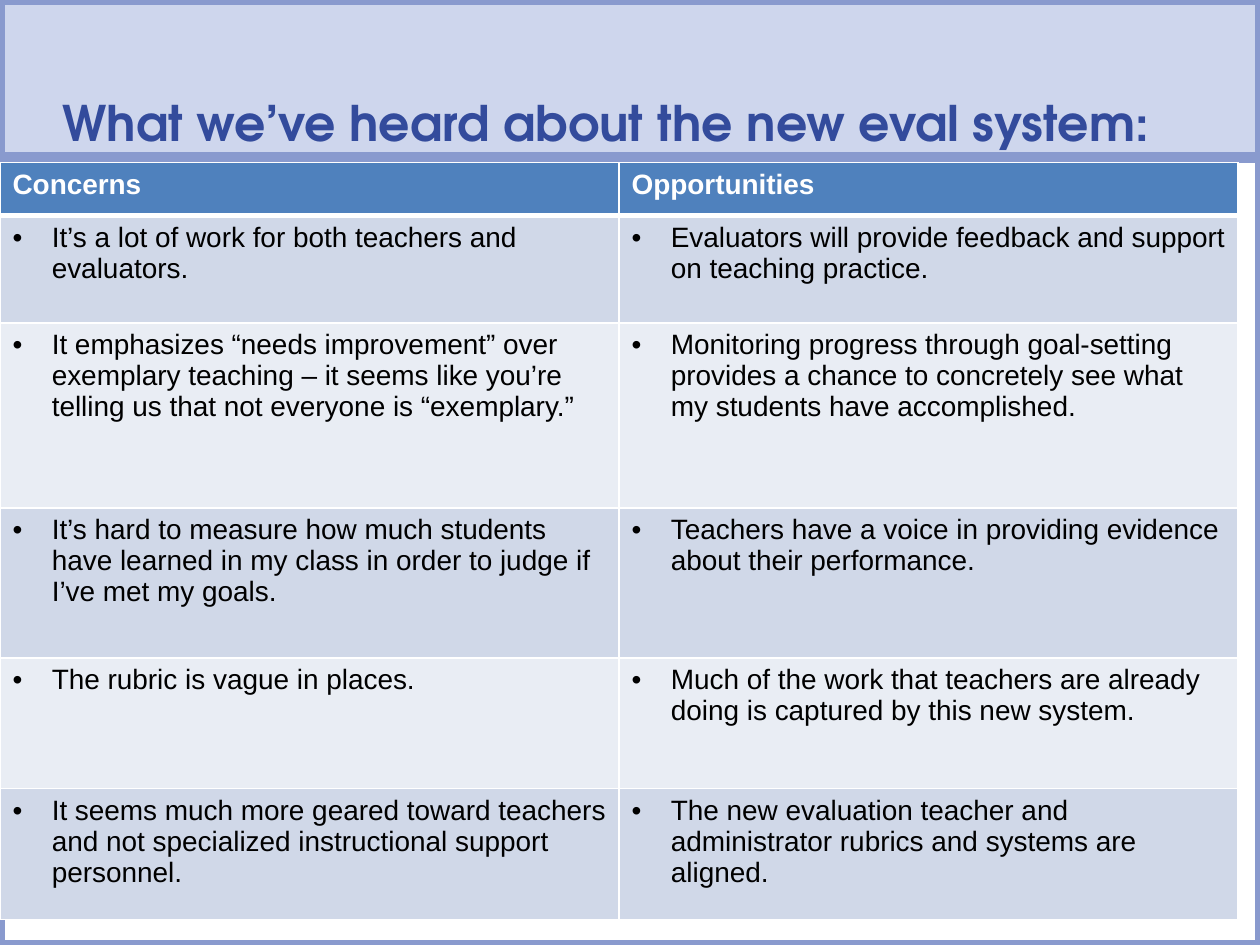
"""Build a slide that sets concerns beside opportunities of the new evaluation system."""
from lxml.etree import SubElement
from pptx import Presentation
from pptx.dml.color import RGBColor
from pptx.enum.shapes import MSO_SHAPE
from pptx.enum.text import MSO_ANCHOR, PP_ALIGN
from pptx.oxml import parse_xml
from pptx.oxml.ns import nsdecls, qn
from pptx.util import Cm, Pt

TITLE = "What we’ve heard about the new eval system:"
HEADINGS = ("Concerns", "Opportunities")
REMARKS = [
    ("It’s a lot of work for both teachers and evaluators.",
     "Evaluators will provide feedback and support on teaching practice."),
    ("It emphasizes “needs improvement” over exemplary teaching – it seems like "
     "you’re telling us that not everyone is “exemplary.”",
     "Monitoring progress through goal-setting provides a chance to concretely see "
     "what my students have accomplished."),
    ("It’s hard to measure how much students have learned in my class in order to "
     "judge if I’ve met my goals.",
     "Teachers have a voice in providing evidence about their performance."),
    ("The rubric is vague in places.",
     "Much of the work that teachers are already doing is captured by this new system."),
    ("It seems much more geared toward teachers and not specialized instructional "
     "support personnel.",
     "The new evaluation teacher and administrator rubrics and systems are aligned."),
]
ROW_HEIGHTS = (1.07, 2.16, 3.73, 3.02, 2.64, 2.64)
COLUMN_WIDTH = 12.48
SLIDE_WIDTH, SLIDE_HEIGHT, BANNER_HEIGHT = 25.4, 19.05, 3.18
TABLE_TOP = 3.28
FRAME, BANNER, TITLE_INK = "899ACE", "CED6ED", "334B9C"
HEADER_FILL, BAND_FILLS = "4F81BD", ("D0D8E8", "E9EDF4")
WHITE, BLACK = "FFFFFF", "000000"


def rgb(code):
    """Return the colour for a hex string."""
    return RGBColor.from_string(code)


def write(frame, text, *, size=16, font="Arial", color=BLACK, bold=False,
          indent=0, hanging=0, bullet=None, spacing=None):
    """Fill a text frame with one formatted paragraph."""
    paragraph = frame.paragraphs[0]
    paragraph.alignment = PP_ALIGN.LEFT
    if spacing:
        paragraph.line_spacing = Pt(spacing)
    properties = paragraph._p.get_or_add_pPr()
    properties.set("marL", str(Cm(indent)))
    properties.set("indent", str(Cm(-hanging)))
    if bullet:
        SubElement(properties, qn("a:buFont")).set("typeface", "Arial")
        SubElement(properties, qn("a:buChar")).set("char", bullet)
    run = paragraph.add_run()
    run.text = text
    run.font.size, run.font.name, run.font.bold = Pt(size), font, bold
    run.font.color.rgb = rgb(color)


def add_panel(slide, top, height, fill=None):
    """Add a full-width framed rectangle."""
    panel = slide.shapes.add_shape(
        MSO_SHAPE.RECTANGLE, Cm(0), Cm(top), Cm(SLIDE_WIDTH), Cm(height))
    panel.shadow.inherit = False
    if fill:
        panel.fill.solid()
        panel.fill.fore_color.rgb = rgb(fill)
    else:
        panel.fill.background()
    panel.line.color.rgb = rgb(FRAME)
    panel.line.width = Pt(6)
    return panel


def style_cell(cell, fill, bottom=1):
    """Give a cell its fill and white borders."""
    cell.fill.solid()
    cell.fill.fore_color.rgb = rgb(fill)
    widths = {"lnL": 1, "lnR": 1, "lnT": 1, "lnB": bottom}
    for position, (side, width) in enumerate(widths.items()):
        cell._tc.get_or_add_tcPr().insert(position, parse_xml(
            f'<a:{side} {nsdecls("a")} w="{Pt(width)}"><a:solidFill>'
            f'<a:srgbClr val="{WHITE}"/></a:solidFill></a:{side}>'))


def add_remarks(slide):
    """Add the table of concerns and opportunities."""
    table = slide.shapes.add_table(
        len(ROW_HEIGHTS), len(HEADINGS), Cm(0), Cm(TABLE_TOP),
        Cm(COLUMN_WIDTH * len(HEADINGS)), Cm(sum(ROW_HEIGHTS))).table
    for column in table.columns:
        column.width = Cm(COLUMN_WIDTH)
    for row, height in zip(table.rows, ROW_HEIGHTS):
        row.height = Cm(height)
    for cell, heading in zip(table.rows[0].cells, HEADINGS):
        style_cell(cell, HEADER_FILL, bottom=3)
        write(cell.text_frame, heading, color=WHITE, bold=True)
    for index, pair in enumerate(REMARKS):
        for cell, remark in zip(table.rows[index + 1].cells, pair):
            style_cell(cell, BAND_FILLS[index % 2], bottom=1)
            write(cell.text_frame, remark, indent=0.79, hanging=0.79, bullet="•")


def main():
    """Build and save the slide."""
    deck = Presentation()
    deck.slide_width, deck.slide_height = Cm(SLIDE_WIDTH), Cm(SLIDE_HEIGHT)
    slide = deck.slides.add_slide(deck.slide_layouts[6])
    add_panel(slide, BANNER_HEIGHT, SLIDE_HEIGHT - BANNER_HEIGHT)
    banner = add_panel(slide, 0, BANNER_HEIGHT, BANNER).text_frame
    banner.word_wrap = True
    banner.vertical_anchor = MSO_ANCHOR.BOTTOM
    banner.margin_left = banner.margin_top = Cm(0)
    banner.margin_right, banner.margin_bottom = Cm(1.27), Cm(0.13)
    write(banner, TITLE, size=28, font="TeX Gyre Adventor", color=TITLE_INK,
          bold=True, indent=1.27, spacing=26)
    add_remarks(slide)
    deck.save("out.pptx")


if __name__ == "__main__":
    main()
